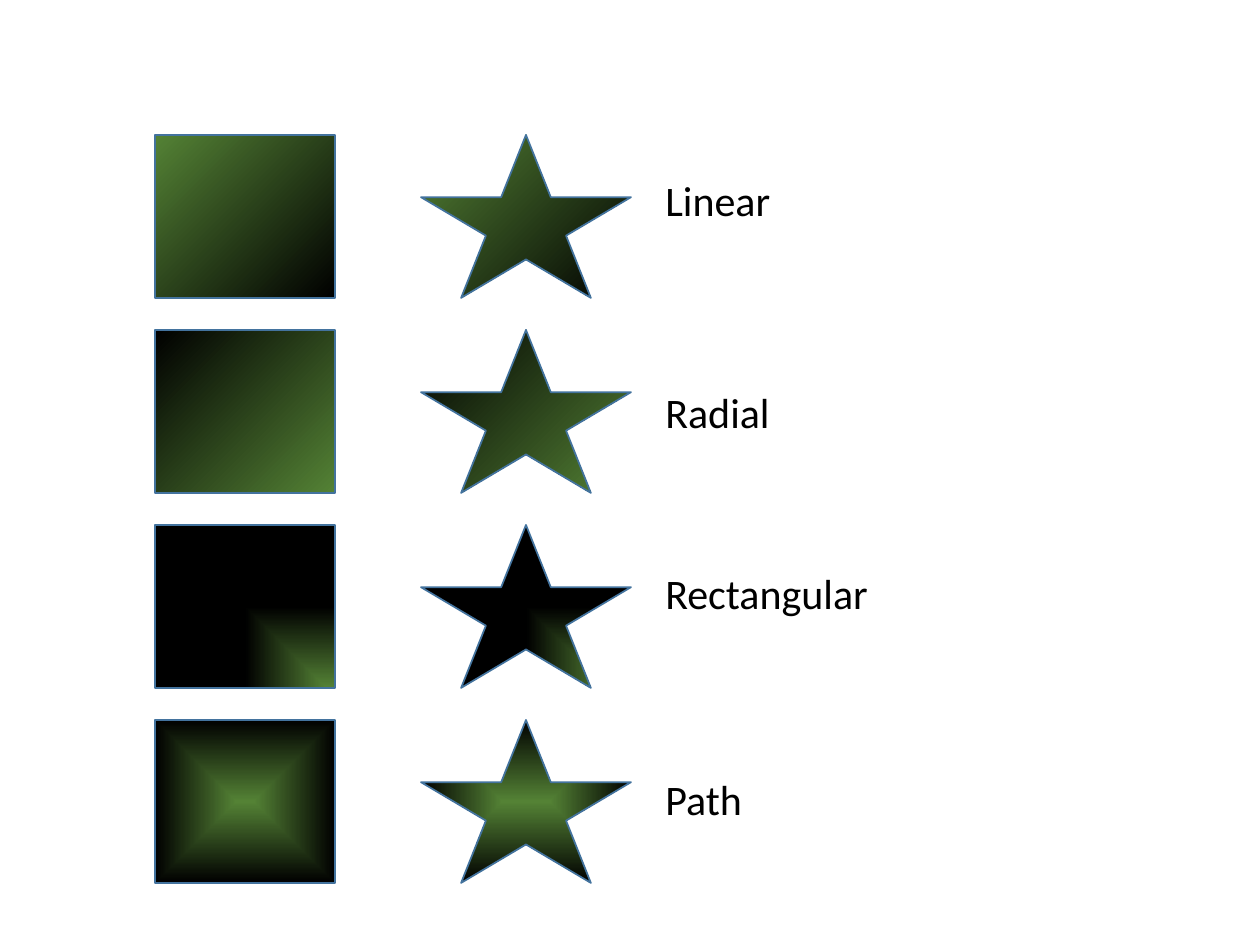
"""Build a slide that shows four gradient kinds on a box and a star."""
from lxml import etree
from pptx import Presentation
from pptx.dml.color import RGBColor
from pptx.enum.shapes import MSO_SHAPE
from pptx.enum.text import MSO_ANCHOR
from pptx.oxml.ns import qn
from pptx.util import Pt

BOX, STAR = MSO_SHAPE.RECTANGLE, MSO_SHAPE.STAR_5_POINT
MIDDLE = MSO_ANCHOR.MIDDLE
PX = 914400 // 126
GREEN, BLACK, BLUE = "548235", "000000", "43739E"
CORNER = {"l": "100000", "t": "100000"}
CENTRE = {side: "50000" for side in "ltrb"}
TOP, STEP, HIGH = 135, 195, 163
FORMS = [(BOX, 155, 180), (STAR, 421, 210)]
ROWS = [
    ("Linear", 170, None, None),
    ("Radial", 382, "circle", CORNER),
    ("Rectangular", 563, "rect", CORNER),
    ("Path", 769, "shape", CENTRE),
]


def color(code):
    return RGBColor.from_string(code)


def shade(shape, kind, focus):
    fill = shape.fill
    fill.gradient()
    for stop, code in zip(fill.gradient_stops, (GREEN, BLACK)):
        stop.color.rgb = color(code)
    fill.gradient_angle = 315
    if kind:
        grad = shape._element.spPr.find(qn("a:gradFill"))
        grad.remove(grad.find(qn("a:lin")))
        path = etree.SubElement(grad, qn("a:path"), {"path": kind})
        etree.SubElement(path, qn("a:fillToRect"), focus)


prs = Presentation()
prs.slide_width, prs.slide_height = 1260 * PX, 945 * PX
slide = prs.slides.add_slide(prs.slide_layouts[6])

for row, (name, y, kind, focus) in enumerate(ROWS):
    for form, x, wide in FORMS:
        shape = slide.shapes.add_shape(
            form, x * PX, (TOP + row * STEP) * PX, wide * PX, HIGH * PX)
        shape.shadow.inherit = False
        shade(shape, kind, focus)
        shape.line.color.rgb = color(BLUE)
        shape.line.width = Pt(1)

    label = slide.shapes.add_textbox(653 * PX, y * PX, 238 * PX, 60 * PX)
    frame = label.text_frame
    frame.word_wrap = True
    frame.vertical_anchor = MIDDLE
    run = frame.paragraphs[0].add_run()
    run.text = name
    run.font.name = "Calibri"
    run.font.size = Pt(24)
    run.font.color.rgb = color(BLACK)

prs.save("out.pptx")
